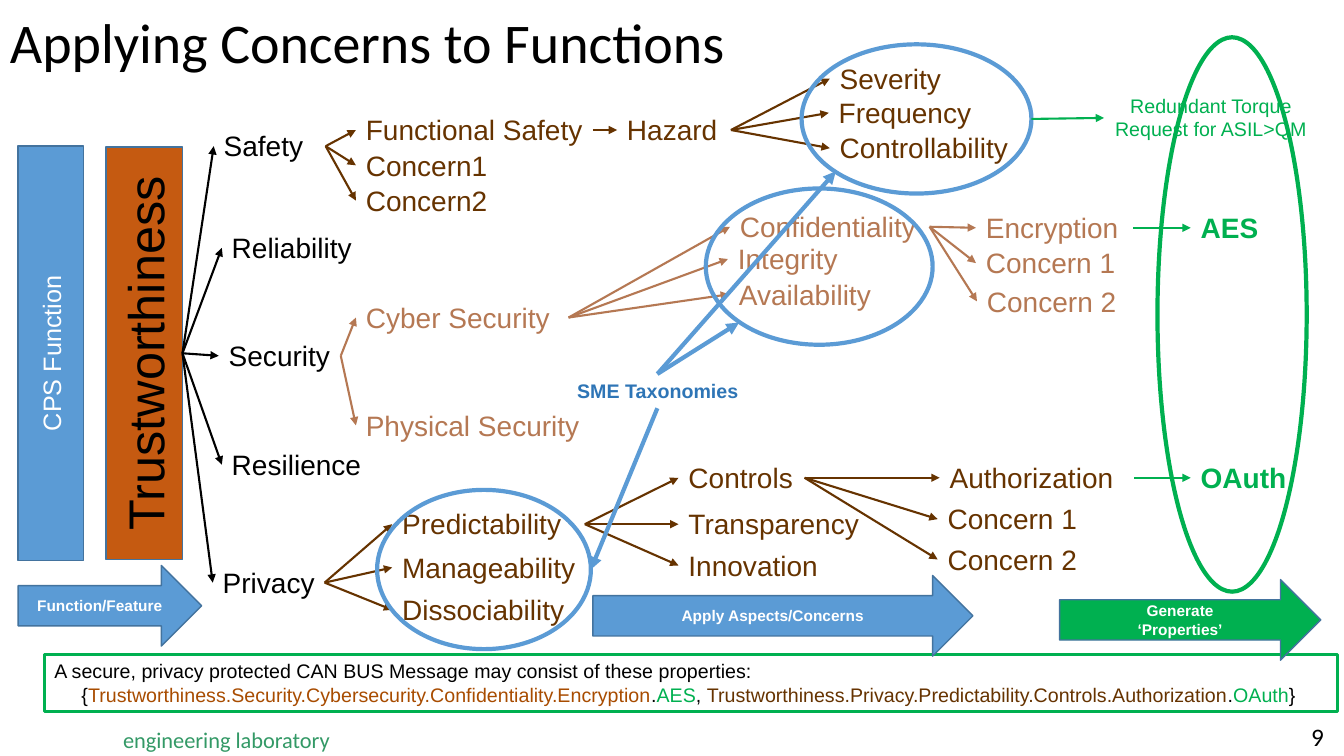
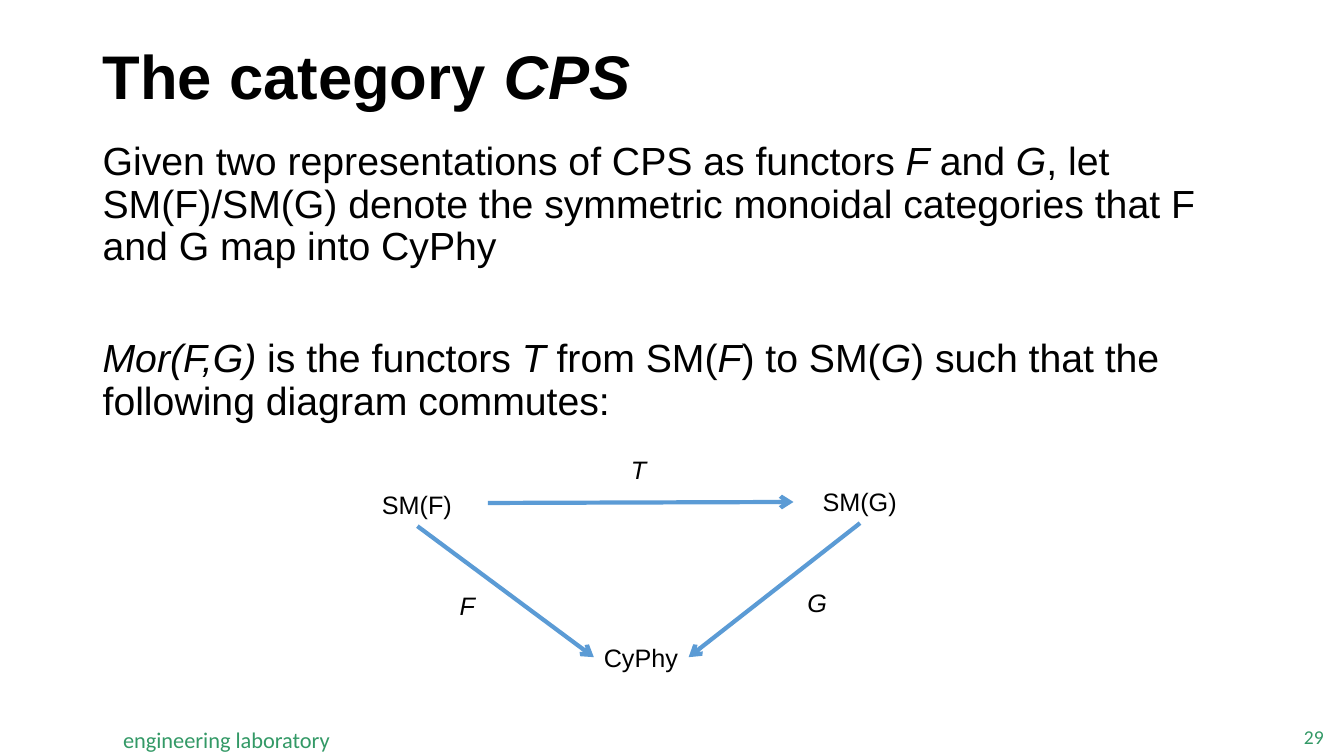
from dataclasses import dataclass
from typing import NamedTuple

from lxml.etree import SubElement
from pptx import Presentation
from pptx.dml.color import RGBColor
from pptx.enum.shapes import MSO_CONNECTOR, MSO_SHAPE
from pptx.enum.text import MSO_ANCHOR, PP_ALIGN
from pptx.oxml.ns import qn
from pptx.util import Inches, Pt

BLACK, WHITE = "000000", "FFFFFF"
BLUE, BLUE_EDGE, BLUE_TEXT = "5B9BD5", "43739E", "2E75B6"
GREEN, FOOTER_GREEN = "00B050", "339966"
BROWN, TAN, RUST, ORANGE = "663300", "B57853", "A84C00", "C55A11"
LABEL_HEIGHT = 0.44


class Area(NamedTuple):
    left: float
    top: float
    width: float
    height: float


class Span(NamedTuple):
    text: str
    color: str = BLACK
    italic: bool = False


class Arrow(NamedTuple):
    start: tuple[float, float]
    end: tuple[float, float]


@dataclass(frozen=True)
class Concern:
    """A label whose arrows lead to its more detailed concerns."""
    text: str
    left: float
    top: float
    width: float
    color: str = BROWN
    bold: bool = False
    children: tuple["Concern", ...] = ()


@dataclass(frozen=True)
class Panel:
    text: str
    area: Area
    fill: str = BLUE
    kind: MSO_SHAPE = MSO_SHAPE.RIGHT_ARROW
    size: int = 11
    color: str = WHITE
    bold: bool = True
    upright: bool = False


CONCERNS = (
    Concern("Safety", 2.12, 1.23, 1.11, BLACK, children=(
        Concern("Functional Safety", 3.53, 1.07, 2.35, children=(
            Concern("Hazard", 6.12, 1.07, 1.13, children=(
                Concern("Severity", 8.23, 0.56, 1.25),
                Concern("Frequency", 8.22, 0.9, 1.58),
                Concern("Controllability", 8.23, 1.25, 1.9))),)),
        Concern("Concern1", 3.53, 1.42, 1.54),
        Concern("Concern2", 3.53, 1.77, 1.53))),
    Concern("Reliability", 2.2, 2.24, 1.43, BLACK),
    Concern("Security", 2.17, 3.31, 1.21, BLACK, children=(
        Concern("Cyber Security", 3.53, 2.93, 2.11, TAN, children=(
            Concern("Confidentiality", 7.24, 2.03, 1.98, TAN, children=(
                Concern("Encryption", 9.68, 2.04, 1.56, TAN, children=(
                    Concern("AES", 11.81, 2.04, 0.95, GREEN, True),)),
                Concern("Concern 1", 9.68, 2.39, 1.83, TAN),
                Concern("Concern 2", 9.69, 2.77, 1.83, TAN))),
            Concern("Integrity", 7.22, 2.35, 1.61, TAN),
            Concern("Availability", 7.23, 2.7, 1.92, TAN))),
        Concern("Physical Security", 3.53, 4.0, 2.34, TAN))),
    Concern("Resilience", 2.2, 4.39, 2.05, BLACK),
    Concern("Privacy", 2.11, 5.56, 1.11, BLACK, children=(
        Concern("Predictability", 3.89, 4.98, 1.91, children=(
            Concern("Controls", 6.73, 4.52, 1.25, children=(
                Concern("Authorization", 9.32, 4.52, 1.93, children=(
                    Concern("OAuth", 11.81, 4.52, 1.37, GREEN, True),)),
                Concern("Concern 1", 9.3, 4.93, 1.54),
                Concern("Concern 2", 9.3, 5.33, 1.53))),
            Concern("Transparency", 6.73, 4.98, 1.91),
            Concern("Innovation", 6.73, 5.39, 1.52))),
        Concern("Manageability", 3.89, 5.41, 1.97),
        Concern("Dissociability", 3.89, 5.83, 1.91))),
)
FUNCTION_PANEL = Panel("CPS Function", Area(0.18, 1.45, 0.65, 4.11), kind=MSO_SHAPE.RECTANGLE,
                       size=18, bold=False, upright=True)
TRUST_PANEL = Panel("Trustworthiness", Area(1.05, 1.46, 0.76, 4.09), ORANGE, MSO_SHAPE.RECTANGLE,
                    size=36, color=BLACK, bold=False, upright=True)
STEPS = (
    Panel("Function/Feature", Area(0.18, 5.61, 1.82, 0.8)),
    Panel("Apply Aspects/Concerns", Area(5.88, 5.71, 3.77, 0.8)),
    Panel("Generate\n‘Properties’", Area(10.51, 5.75, 2.59, 0.8), GREEN),
)
RINGS = (
    (Area(7, 1.87, 2.25, 1.55), BLUE),
    (Area(3.74, 4.86, 2.12, 1.58), BLUE),
    (Area(7.95, 0.44, 2.28, 1.48), BLUE),
    (Area(11.48, 0.37, 1.48, 5.5), GREEN),
)
TAXONOMY_ARROWS = (
    Arrow((6.52, 3.71), (7.33, 3.2)),
    Arrow((6.52, 4.05), (5.86, 5.65)),
    Arrow((6.52, 3.71), (8.29, 1.7)),
)
PROPERTIES = (
    (Span("A secure, privacy protected CAN BUS Message may consist of these properties:"),),
    (Span("{"),
     Span("Trustworthiness.Security.Cybersecurity.Confidentiality.Encryption", RUST),
     Span("."), Span("AES", GREEN), Span(", "),
     Span("Trustworthiness.Privacy.Predictability.Controls.Authorization", BROWN),
     Span("."), Span("OAuth", GREEN), Span("}")),
)
CATEGORY_TEXT = (
    (Span("Given two representations of CPS as functors "), Span("F ", italic=True),
     Span("and "), Span("G", italic=True),
     Span(", let SM(F)/SM(G) denote the symmetric monoidal categories that F and G map into CyPhy")),
    (Span("Mor(F,G) ", italic=True), Span("is the functors "), Span("T", italic=True),
     Span(" from SM("), Span("F", italic=True), Span(") to SM("), Span("G", italic=True),
     Span(") such that the following diagram commutes:")),
)
DIAGRAM_LABELS = (
    (Span("SM(F)"), Area(3.69, 4.81, 0.9, 0.4)),
    (Span("SM(G)"), Area(8.06, 4.78, 0.95, 0.4)),
    (Span("CyPhy"), Area(5.89, 6.32, 0.95, 0.4)),
    (Span("F", italic=True), Area(4.46, 5.81, 0.41, 0.4)),
    (Span("G", italic=True), Area(7.91, 5.78, 0.46, 0.4)),
    (Span("T", italic=True), Area(6.16, 4.46, 0.42, 0.4)),
)
DIAGRAM_ARROWS = (
    Arrow((4.84, 4.99), (7.87, 4.98)),
    Arrow((8.53, 5.19), (6.83, 6.52)),
    Arrow((4.14, 5.22), (5.89, 6.52)),
)


def rgb(color: str) -> RGBColor:
    return RGBColor.from_string(color)


def inches(values: tuple) -> list:
    return [Inches(value) for value in values]


def write(shape, paragraphs, *, size: int, color: str | None = None, font: str = "Arial",
          bold: bool = False, align=PP_ALIGN.LEFT, anchor=MSO_ANCHOR.TOP, wrap: bool = True,
          inset: bool = True, line_spacing: float | None = None, gap: float = 0):
    """Fill a shape with a plain string (one line a paragraph) or rows of spans."""
    if isinstance(paragraphs, str):
        paragraphs = [[Span(line)] for line in paragraphs.split("\n")]
    frame = shape.text_frame
    frame.word_wrap = wrap
    frame.vertical_anchor = anchor
    if not inset:
        frame.margin_left = frame.margin_right = frame.margin_top = frame.margin_bottom = 0
    for index, spans in enumerate(paragraphs):
        para = frame.add_paragraph() if index else frame.paragraphs[0]
        para.alignment = align
        if line_spacing:
            para.line_spacing = line_spacing
        if index and gap:
            para.space_before = Pt(gap)
        for span in spans:
            run = para.add_run()
            run.text = span.text
            run.font.name, run.font.size = font, Pt(size)
            run.font.bold, run.font.italic = bold, span.italic
            run.font.color.rgb = rgb(color or span.color)
    return shape


def add_text(slide, area: Area, paragraphs, **style):
    return write(slide.shapes.add_textbox(*inches(area)), paragraphs, **style)


def add_outline(slide, kind: MSO_SHAPE, area: Area, line: str, width: float,
                fill: str | None = None):
    shape = slide.shapes.add_shape(kind, *inches(area))
    shape.shadow.inherit = False
    shape.line.color.rgb, shape.line.width = rgb(line), Pt(width)
    if fill:
        shape.fill.solid()
        shape.fill.fore_color.rgb = rgb(fill)
    else:
        shape.fill.background()
    return shape


def add_panel(slide, panel: Panel):
    shape = add_outline(slide, panel.kind, panel.area, BLUE_EDGE, 1, panel.fill)
    if panel.upright:
        shape.text_frame._txBody.bodyPr.set("vert", "vert270")
    return write(shape, panel.text, size=panel.size, color=panel.color, bold=panel.bold,
                 align=PP_ALIGN.CENTER, anchor=MSO_ANCHOR.MIDDLE)


def add_arrow(slide, arrow: Arrow, color: str = BLUE, width: float = 3, head: str = "triangle"):
    line = slide.shapes.add_connector(MSO_CONNECTOR.STRAIGHT, *inches(arrow.start + arrow.end))
    line.line.color.rgb, line.line.width = rgb(color), Pt(width)
    SubElement(line.line._get_or_add_ln(), qn("a:tailEnd"), type=head)
    SubElement(line._element.spPr, qn("a:effectLst"))
    return line


def add_concerns(slide, parent, concerns: tuple[Concern, ...]) -> None:
    """Draw the concerns, each joined by an arrow from the right side of its parent."""
    for concern in concerns:
        area = Area(concern.left, concern.top, concern.width, LABEL_HEIGHT)
        box = add_text(slide, area, concern.text, size=20, color=concern.color, bold=concern.bold)
        line = add_arrow(slide, Arrow((0, 0), (1, 1)), concern.color, 1.5)
        line.begin_connect(parent, 3)
        line.end_connect(box, 1)
        add_concerns(slide, box, concern.children)


def add_page(deck, number: int, number_size: int, number_color: str):
    """Add a blank slide with the shared footer and page number."""
    slide = deck.slides.add_slide(deck.slide_layouts[6])
    add_text(slide, Area(1.22, 7.2, 2.08, 0.27), "engineering laboratory", size=16,
             color=FOOTER_GREEN, font="Calibri", wrap=False, inset=False)
    add_text(slide, Area(12.51, 7.18, 0.62, 0.26), str(number), size=number_size,
             color=number_color, font="Calibri", align=PP_ALIGN.RIGHT,
             anchor=MSO_ANCHOR.MIDDLE, inset=False)
    return slide


def build_concerns_page(deck) -> None:
    slide = add_page(deck, 9, 18, BLACK)
    add_text(slide, Area(0, 0.03, 7.74, 0.77), "Applying Concerns to Functions",
             size=40, font="Calibri")
    add_panel(slide, FUNCTION_PANEL)
    add_concerns(slide, add_panel(slide, TRUST_PANEL), CONCERNS)
    for area, color in RINGS:
        add_outline(slide, MSO_SHAPE.OVAL, area, color, 3)
    add_arrow(slide, Arrow((10.23, 1.18), (10.95, 1.17)), GREEN, 1.5)
    add_text(slide, Area(10.95, 0.88, 2.12, 0.57), "Redundant Torque Request for ASIL>QM",
             size=14, color=GREEN, align=PP_ALIGN.CENTER)
    add_text(slide, Area(5.56, 3.71, 1.93, 0.34), "SME Taxonomies", size=14,
             color=BLUE_TEXT, bold=True, align=PP_ALIGN.CENTER)
    for arrow in TAXONOMY_ARROWS:
        add_arrow(slide, arrow)
    box = add_outline(slide, MSO_SHAPE.RECTANGLE, Area(0.44, 6.49, 12.83, 0.57), GREEN, 2.25)
    write(box, PROPERTIES, size=14)
    example = box.text_frame.paragraphs[1]
    example._p.get_or_add_pPr().set("marL", str(Inches(0.27)))
    for step in STEPS:
        add_panel(slide, step)


def build_category_page(deck) -> None:
    slide = add_page(deck, 29, 14, FOOTER_GREEN)
    add_text(slide, Area(0.92, 0.4, 11.5, 0.78),
             [[Span("The category "), Span("CPS", italic=True)]],
             size=44, bold=True, anchor=MSO_ANCHOR.MIDDLE, line_spacing=0.9)
    add_text(slide, Area(0.92, 1.36, 11.5, 3.11), CATEGORY_TEXT, size=28,
             line_spacing=0.9, gap=50)
    for span, area in DIAGRAM_LABELS:
        add_text(slide, area, [[span]], size=18, wrap=False)
    for arrow in DIAGRAM_ARROWS:
        add_arrow(slide, arrow, head="arrow")


def main() -> None:
    deck = Presentation()
    deck.slide_width, deck.slide_height = Inches(13.33), Inches(7.5)
    build_concerns_page(deck)
    build_category_page(deck)
    deck.save("out.pptx")


if __name__ == "__main__":
    main()
